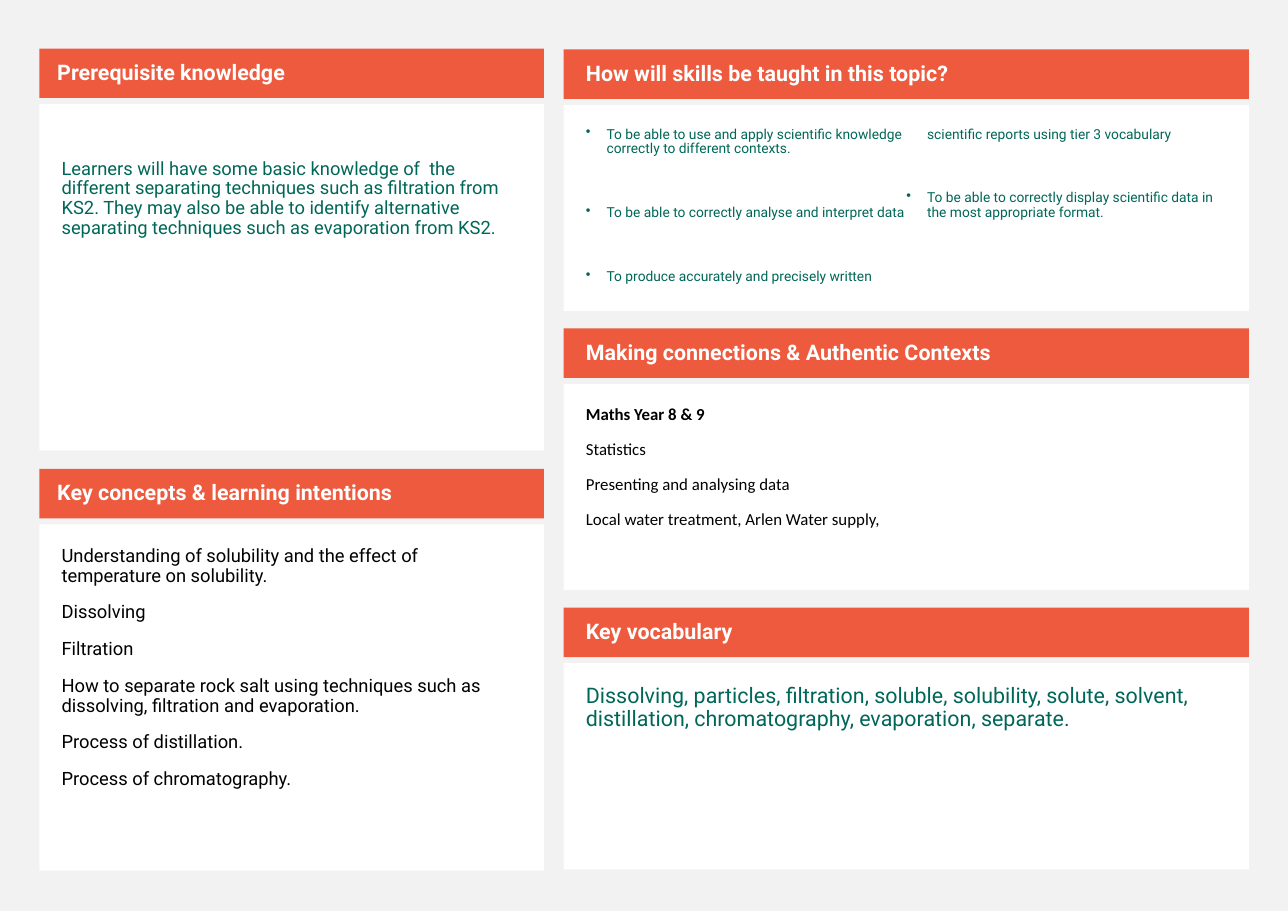
import dataclasses

import lxml.etree
import pptx
import pptx.dml.color
import pptx.enum.shapes
import pptx.enum.text
import pptx.oxml.ns
import pptx.util

Cm, Pt = pptx.util.Cm, pptx.util.Pt
RGB = pptx.dml.color.RGBColor.from_string
ANCHOR = pptx.enum.text.MSO_ANCHOR


@dataclasses.dataclass(frozen=True)
class Theme:
    """Colours, fonts and type sizes of the slide."""
    page: str = "F2F2F2"
    card: str = "FFFFFF"
    bar: str = "ED5A3E"
    green: str = "006758"
    black: str = "000000"
    font: str = "Roboto"
    plain_font: str = "Calibri"
    heading: int = 14
    body: int = 12
    plain: int = 11
    small: int = 9


THEME = Theme()
HEADING = dict(name=THEME.font, size=Pt(THEME.heading), bold=True)
BODY = dict(name=THEME.font, size=Pt(THEME.body), bold=False)
VOCABULARY = dict(BODY, size=Pt(THEME.heading))
SKILLS = dict(BODY, size=Pt(THEME.small))
CONTEXTS = dict(BODY, name=THEME.plain_font, size=Pt(THEME.plain))

BAR_HEIGHT, CARD_OFFSET, INSET = 1.14, 1.28, 0.51

LEFT_PANELS = [
    dict(
        heading="Prerequisite knowledge",
        lines=["Learners will have some basic knowledge of  the different separating "
               "techniques such as filtration from KS2. They may also be able to identify "
               "alternative separating techniques such as evaporation from KS2."],
        font=BODY, color=THEME.green, top_inset=1.27, holders=(1, 2)),
    dict(
        heading="Key concepts & learning intentions",
        lines=["Understanding of solubility and the effect of temperature on solubility.",
               "Dissolving",
               "Filtration",
               "How to separate rock salt using techniques such "
               "as dissolving, filtration and evaporation.",
               "Process of distillation.",
               "Process of chromatography."],
        font=BODY, color=THEME.black, holders=(3, 4)),
]
RIGHT_PANELS = [
    dict(
        heading="How will skills be taught in this topic?",
        lines=["To be able to use and apply scientific knowledge correctly to different contexts.",
               "To be able to correctly analyse and interpret data",
               "To produce accurately and precisely written scientific reports "
               "using tier 3 vocabulary",
               "To be able to correctly display scientific data in the most appropriate format."],
        font=SKILLS, color=THEME.green, bullet=True, columns=2, before=32),
    dict(
        heading="Making connections & Authentic Contexts",
        lines=["Maths Year 8 & 9",
               "Statistics",
               "Presenting and analysing data",
               "Local water treatment, Arlen Water supply,"],
        font=CONTEXTS, color=THEME.black, bold_first=True),
    dict(
        heading="Key vocabulary",
        lines=["Dissolving, particles, filtration, soluble, solubility, solute, "
               "solvent, distillation, chromatography, evaporation, separate."],
        font=VOCABULARY, color=THEME.green),
]


def apply(obj, values):
    """Set each attribute named in values on obj."""
    for name, value in values.items():
        setattr(obj, name, value)


def add_block(slide, box, fill, holder=None):
    """Return a filled rectangle, or the placeholder moved into the box."""
    lengths = [Cm(v) for v in box]
    if holder is None:
        sp = slide.shapes.add_shape(pptx.enum.shapes.MSO_SHAPE.RECTANGLE, *lengths)
    else:
        sp = next(s for s in slide.placeholders if s.placeholder_format.idx == holder)
        apply(sp, dict(zip(("left", "top", "width", "height"), lengths)))
    sp.shadow.inherit = False
    sp.fill.solid()
    sp.fill.fore_color.rgb = RGB(fill)
    sp.line.fill.background()
    return sp


def set_bullet(p, bullet):
    """Give the paragraph a hanging bullet, or none."""
    pPr = p._p.get_or_add_pPr()
    indent = Cm(0.48) if bullet else 0
    pPr.set("marL", str(indent))
    pPr.set("indent", str(-indent))
    tag = "a:buChar" if bullet else "a:buNone"
    bu = lxml.etree.SubElement(pPr, pptx.oxml.ns.qn(tag))
    if bullet:
        bu.set("char", "•")


def write(sp, lines, font, color, insets, anchor=ANCHOR.TOP, bullet=False,
          columns=1, before=11, bold_first=False):
    """Fill the shape with one formatted paragraph for each line."""
    tf = sp.text_frame
    margins = ("margin_left", "margin_top", "margin_right", "margin_bottom")
    apply(tf, dict(zip(margins, [Cm(v) for v in insets])))
    apply(tf, dict(word_wrap=True, vertical_anchor=anchor,
                   auto_size=pptx.enum.text.MSO_AUTO_SIZE.NONE))
    if columns > 1:
        tf._txBody.bodyPr.set("numCol", str(columns))
    for i, line in enumerate(lines):
        p = tf.add_paragraph() if i else tf.paragraphs[0]
        apply(p, dict(alignment=pptx.enum.text.PP_ALIGN.LEFT,
                      line_spacing=0.9, space_before=Pt(before)))
        set_bullet(p, bullet)
        r = p.add_run()
        r.text = line
        apply(r.font, font)
        r.font.color.rgb = RGB(color)
        if bold_first and i == 0:
            r.font.bold = True


def add_panel(slide, box, bar_inset, heading, lines, font, color,
              top_inset=INSET, holders=(None, None), **options):
    """Place a heading bar and the white card below it in the box."""
    left, top, width, height = box
    bar = add_block(slide, (left, top, width, BAR_HEIGHT), THEME.bar, holders[0])
    write(bar, [heading], HEADING, THEME.card,
          (bar_inset, 0.13, 0.25, 0.13), ANCHOR.MIDDLE)
    card_box = (left, top + CARD_OFFSET, width, height - CARD_OFFSET)
    card = add_block(slide, card_box, THEME.card, holders[1])
    write(card, lines, font, color, (INSET, top_inset, INSET, INSET), **options)


def add_column(slide, box, panels, gap, bar_inset):
    """Stack panels of equal height down the box."""
    left, top, width, height = box
    step = (height + gap) / len(panels)
    for i, panel in enumerate(panels):
        add_panel(slide, (left, top + i * step, width, step - gap), bar_inset, **panel)


def main():
    """Build the topic overview and save it."""
    prs = pptx.Presentation()
    apply(prs, dict(slide_width=Cm(29.7), slide_height=Cm(21)))
    slide = prs.slides.add_slide(prs.slide_layouts.get_by_name("Comparison"))
    slide.background.fill.solid()
    slide.background.fill.fore_color.rgb = RGB(THEME.page)
    title = slide.shapes.title.element
    title.getparent().remove(title)
    add_column(slide, (0.91, 1.12, 11.63, 18.95), LEFT_PANELS, 0.43, 0.41)
    add_column(slide, (13, 1.14, 15.8, 18.9), RIGHT_PANELS, 0.4, INSET)
    prs.save("out.pptx")


if __name__ == "__main__":
    main()
